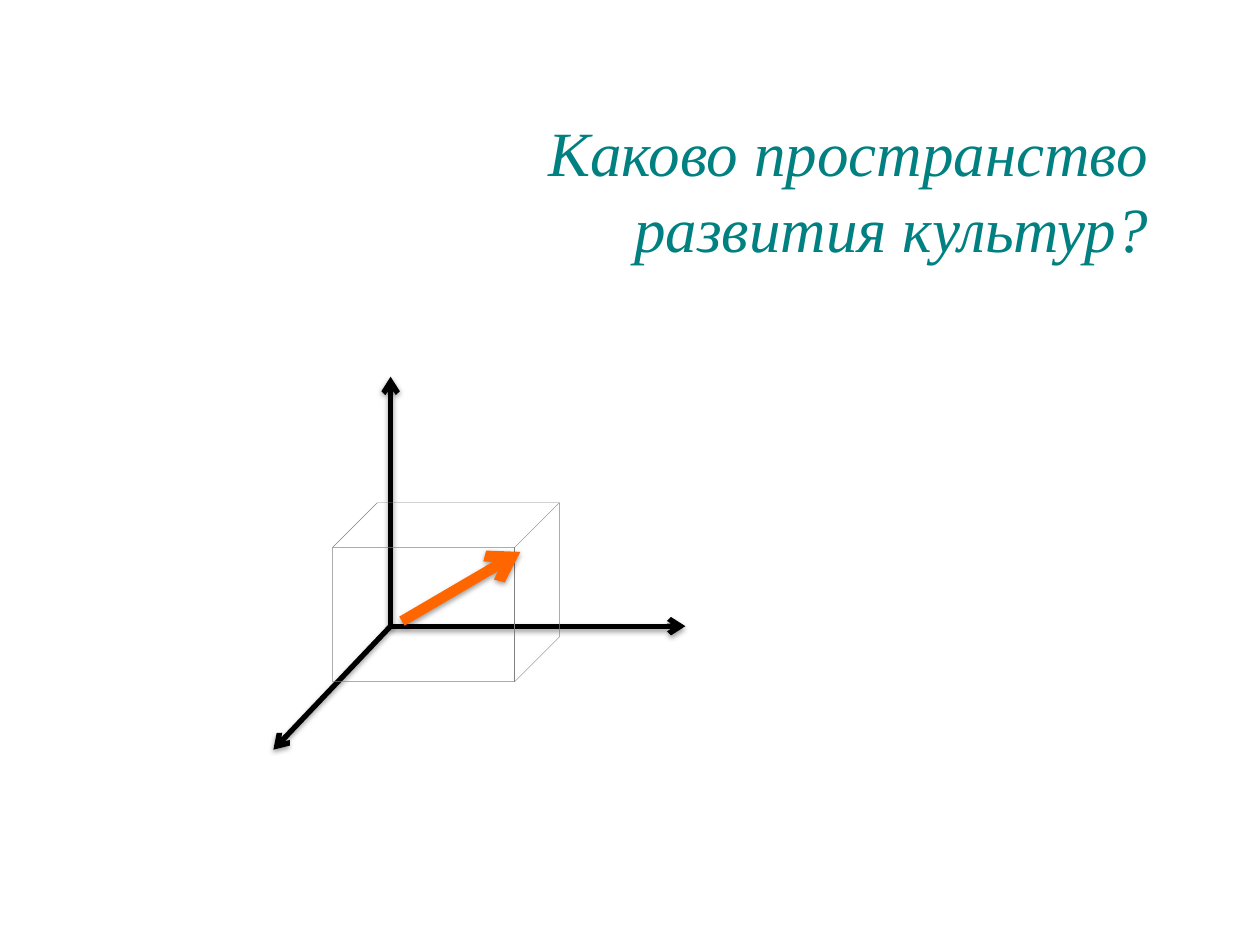
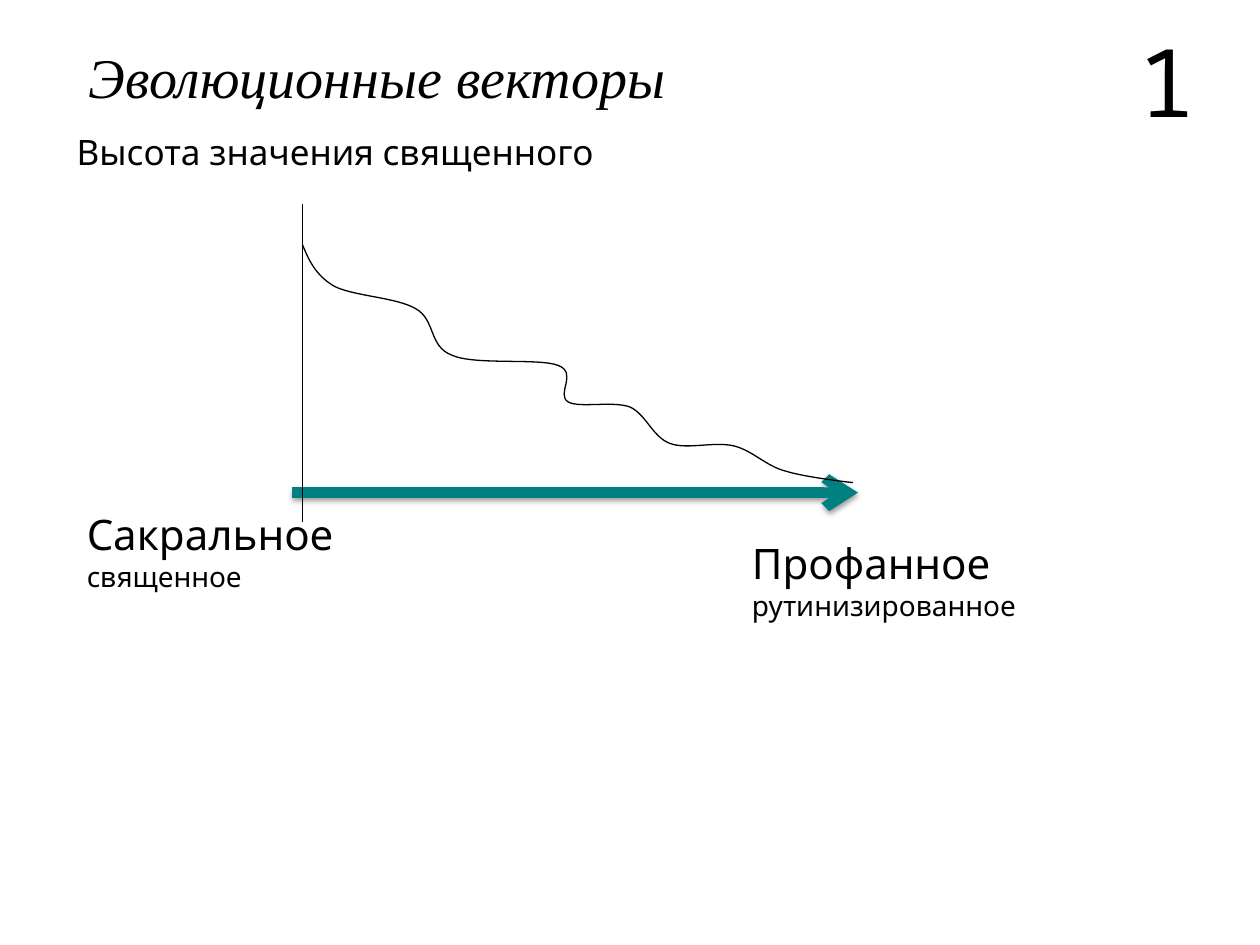
from lxml.etree import SubElement
from pptx import Presentation
from pptx.dml.color import RGBColor
from pptx.enum.shapes import MSO_CONNECTOR, MSO_SHAPE
from pptx.enum.text import MSO_ANCHOR, MSO_AUTO_SIZE, PP_ALIGN
from pptx.oxml import parse_xml
from pptx.oxml.ns import nsdecls, qn
from pptx.util import Inches, Pt

BLACK, TEAL, ORANGE, GRAY = "000000", "008080", "FF6600", "808080"
SERIF, SANS, MONO = "Times New Roman", "League Spartan", "Noto Sans Mono"

# Slide 1: three axes from one origin, and the vector inside the cube
ORIGIN = (3.1, 4.97)
AXES = [(5.44, 4.97), (3.1, 2.99), (2.17, 5.95)]
CUBE = (2.64, 3.99, 1.8, 1.42)
VECTOR = ((3.19, 4.93), (4.13, 4.38))

# Slide 2: box, lines as (text, size), font, space after
LABELS = [
    ((0.59, 3.99, 3.15, 0.77), [("Сакральное", 24), ("священное", 16)], SANS, 12),
    ((5.87, 4.22, 3.54, 0.77), [("Профанное", 24), ("рутинизированное", 16)], SANS, 12),
    ((8.94, 0.13, 0.79, 1.01), [("1", 54)], MONO, 0),
    ((0.51, 0.99, 4.57, 0.44), [("Высота значения священного", 20)], SANS, 12),
]
TIME = ((2.32, 3.91), (6.81, 3.91))
HEIGHT = ((2.4, 1.62), (2.4, 4.14))
# Start point, then three points for each Bezier segment
DECLINE = [
    (2.4, 1.94),
    (2.45, 2.06), (2.5, 2.18), (2.65, 2.27),
    (2.8, 2.35), (3.15, 2.36), (3.3, 2.45),
    (3.46, 2.54), (3.4, 2.75), (3.59, 2.82),
    (3.77, 2.9), (4.28, 2.84), (4.43, 2.9),
    (4.59, 2.96), (4.41, 3.13), (4.51, 3.19),
    (4.6, 3.24), (4.86, 3.18), (5, 3.23),
    (5.13, 3.29), (5.18, 3.47), (5.32, 3.52),
    (5.46, 3.57), (5.67, 3.5), (5.83, 3.54),
    (5.98, 3.58), (6.08, 3.7), (6.24, 3.74),
    (6.4, 3.79), (6.77, 3.83), (6.77, 3.83),
]

SHADOW = (
    f'<a:effectLst {nsdecls("a")}>'
    '<a:outerShdw blurRad="40000" dist="20000" dir="5400000" rotWithShape="0">'
    '<a:srgbClr val="000000"><a:alpha val="38000"/></a:srgbClr>'
    '</a:outerShdw></a:effectLst>'
)
PLAIN = f'<a:effectLst {nsdecls("a")}/>'


def inches(values):
    return [Inches(v) for v in values]


def paint(color, code):
    color.rgb = RGBColor.from_string(code)


def stroke(shape, code, width):
    paint(shape.line.color, code)
    shape.line.width = Pt(width)


def draw_line(shapes, ends, code, width, arrow=False):
    start, end = ends
    line = shapes.add_connector(MSO_CONNECTOR.STRAIGHT, *inches(start + end))
    stroke(line, code, width)
    props = line._element.spPr
    if arrow:
        SubElement(props.find(qn("a:ln")), qn("a:tailEnd"), type="arrow")
    props.append(parse_xml(SHADOW if arrow else PLAIN))


def outline(shape, code, width):
    shape.fill.background()
    shape.shadow.inherit = False
    stroke(shape, code, width)


def draw_curve(shapes, points, code, width):
    """Draw a chain of cubic Bezier segments."""
    first, *rest = [inches(p) for p in points]
    pen = shapes.build_freeform(*first)
    pen.add_line_segments(rest, close=False)
    curve = pen.convert_to_shape()
    outline(curve, code, width)
    track = curve._element.spPr.find(".//" + qn("a:path"))
    steps = track.findall(qn("a:lnTo"))
    for i in range(0, len(steps), 3):
        bend = SubElement(track, qn("a:cubicBezTo"))
        for step in steps[i:i + 3]:
            bend.append(step[0])
            track.remove(step)


def set_text(shape, lines, font, code, after=0, align=PP_ALIGN.LEFT):
    """Write lines of (text, size) as one paragraph with line breaks."""
    frame = shape.text_frame
    frame.word_wrap = True
    frame.auto_size = MSO_AUTO_SIZE.SHAPE_TO_FIT_TEXT
    frame.vertical_anchor = MSO_ANCHOR.TOP
    para = frame.paragraphs[0]
    para.alignment = align
    para.space_after = Pt(after)
    para.font.name = font
    paint(para.font.color, code)
    for i, (text, size) in enumerate(lines):
        if i:
            para.add_line_break()
        run = para.add_run()
        run.text = text
        run.font.size = Pt(size)
    return para


def add_slide(deck, title, box, size, code, align, after=0):
    slide = deck.slides.add_slide(deck.slide_layouts[5])
    head = slide.shapes.title
    head.left, head.top, head.width, head.height = inches(box)
    para = set_text(head, [(title, size)], SERIF, code, after, align)
    para.font.italic = True
    return slide.shapes


def build_space(deck):
    shapes = add_slide(deck, "Каково пространство развития культур?",
                       (2.67, 0.85, 6.54, 1.31), 36, TEAL, PP_ALIGN.RIGHT)
    axes = shapes.add_group_shape().shapes
    for tip in AXES:
        draw_line(axes, (ORIGIN, tip), BLACK, 3, arrow=True)
    cube = shapes.add_shape(MSO_SHAPE.CUBE, *inches(CUBE))
    outline(cube, GRAY, 0.25)
    draw_line(shapes, VECTOR, ORANGE, 6, arrow=True)


def build_trend(deck):
    shapes = add_slide(deck, "Эволюционные векторы",
                       (0.28, 0.29, 5.43, 0.64), 32, BLACK, PP_ALIGN.CENTER, 12)
    draw_line(shapes, TIME, TEAL, 6, arrow=True)
    for box, lines, font, after in LABELS:
        set_text(shapes.add_textbox(*inches(box)), lines, font, BLACK, after)
    draw_line(shapes, HEIGHT, BLACK, 0.75)
    draw_curve(shapes, DECLINE, BLACK, 0.75)


def main():
    deck = Presentation()
    deck.slide_width, deck.slide_height = inches((10, 7.5))
    build_space(deck)
    build_trend(deck)
    deck.save("out.pptx")


if __name__ == "__main__":
    main()
